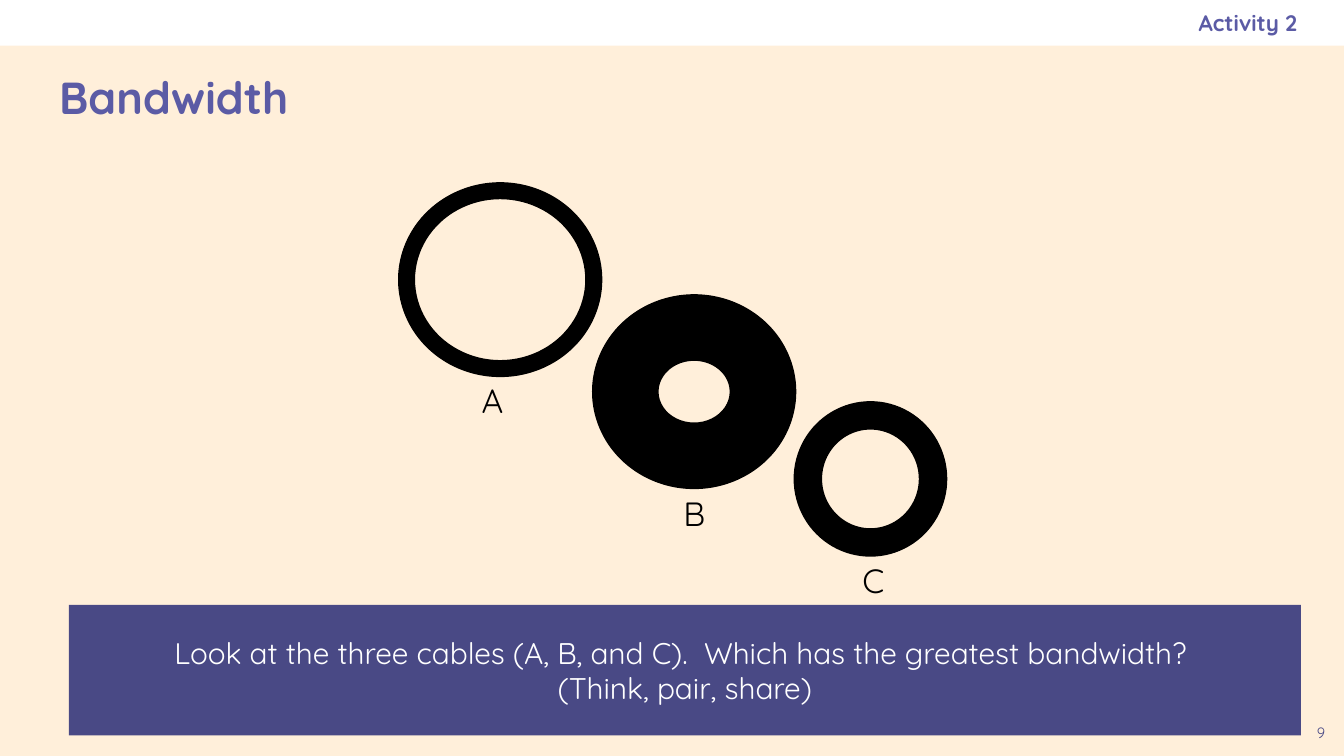
from dataclasses import dataclass

from pptx import Presentation
from pptx.dml.color import RGBColor
from pptx.enum import shapes, text
from pptx.util import Pt


@dataclass(frozen=True)
class Theme:
    font: str = "Quicksand"
    cream: str = "FFEFDA"
    white: str = "FFFFFF"
    black: str = "000000"
    violet: str = "5B5BA5"
    indigo: str = "494985"
    title: int = 24
    label: int = 18
    question: int = 16
    activity: int = 12
    number: int = 8
    inset: float = 7.2


THEME = Theme()
WIDTH, HEIGHT = 720, 405
BAND = 24.5

# Name, ring box, wall thickness ratio, label position
CABLES = [
    ("A", (213.6, 98, 108.7, 103.7), 0.081, (240.5, 196.5)),
    ("B", (317.5, 158, 108.7, 103.7), 0.337, (348.5, 257)),
    ("C", (425.5, 215.3, 81.6, 82.6), 0.178, (444.5, 293)),
]


def paint(fill, color):
    fill.solid()
    fill.fore_color.rgb = RGBColor.from_string(color)


def write(shape, lines, size, color, align, anchor, bold=False, right_inset=THEME.inset):
    frame = shape.text_frame
    frame.text = "\n".join(lines)
    frame.word_wrap = True
    frame.auto_size = text.MSO_AUTO_SIZE.NONE
    frame.vertical_anchor = anchor
    frame.margin_left = frame.margin_top = frame.margin_bottom = Pt(THEME.inset)
    frame.margin_right = Pt(right_inset)
    for paragraph in frame.paragraphs:
        paragraph.alignment = align
        paragraph.space_before = Pt(0)
        for run in paragraph.runs:
            run.font.name = THEME.font
            run.font.size = Pt(size)
            run.font.bold = bold
            run.font.color.rgb = RGBColor.from_string(color)


def add_filled(slide, kind, box, color):
    shape = slide.shapes.add_shape(kind, *map(Pt, box))
    shape.shadow.inherit = False
    paint(shape.fill, color)
    shape.line.fill.background()
    return shape


def add_label(slide, words, box, size, color, align=text.PP_ALIGN.CENTER,
              anchor=text.MSO_ANCHOR.TOP, **style):
    label = slide.shapes.add_textbox(*map(Pt, box))
    write(label, [words], size, color, align, anchor, **style)


def place_title(slide, words):
    title = slide.shapes.title
    title.left, title.top, title.width, title.height = map(Pt, (24.5, BAND, 671, 54.7))
    write(title, [words], THEME.title, THEME.violet,
          text.PP_ALIGN.LEFT, text.MSO_ANCHOR.MIDDLE, bold=True)


def add_question(slide, lines):
    panel = add_filled(slide, shapes.MSO_SHAPE.RECTANGLE, (36.9, 324, 660, 70), THEME.indigo)
    write(panel, lines, THEME.question, THEME.white,
          text.PP_ALIGN.CENTER, text.MSO_ANCHOR.MIDDLE)


def add_cable(slide, name, box, wall, label_at):
    """Draw a cable's cross-section as a ring, with its letter below."""
    ring = add_filled(slide, shapes.MSO_SHAPE.DONUT, box, THEME.black)
    ring.adjustments[0] = wall
    paint(ring.line.fill, THEME.black)
    ring.line.width = Pt(0.75)
    add_label(slide, name, (*label_at, 46.8, BAND), THEME.label, THEME.black)


def main():
    deck = Presentation()
    deck.slide_width, deck.slide_height = Pt(WIDTH), Pt(HEIGHT)
    slide = deck.slides.add_slide(deck.slide_layouts.get_by_name("Title Only"))
    paint(slide.background.fill, THEME.cream)

    add_filled(slide, shapes.MSO_SHAPE.RECTANGLE, (0, 0, WIDTH, BAND), THEME.white)
    place_title(slide, "Bandwidth")
    add_label(slide, "9", (WIDTH - BAND, HEIGHT - BAND, BAND, BAND),
              THEME.number, THEME.indigo)
    add_label(slide, "Activity 2", (414, 0, 281, BAND), THEME.activity, THEME.violet,
              text.PP_ALIGN.RIGHT, text.MSO_ANCHOR.MIDDLE, bold=True, right_inset=0)
    add_question(slide, [
        "Look at the three cables (A, B, and C).  Which has the greatest bandwidth? ",
        "(Think, pair, share)",
    ])
    for cable in CABLES:
        add_cable(slide, *cable)

    deck.save("out.pptx")


if __name__ == "__main__":
    main()
